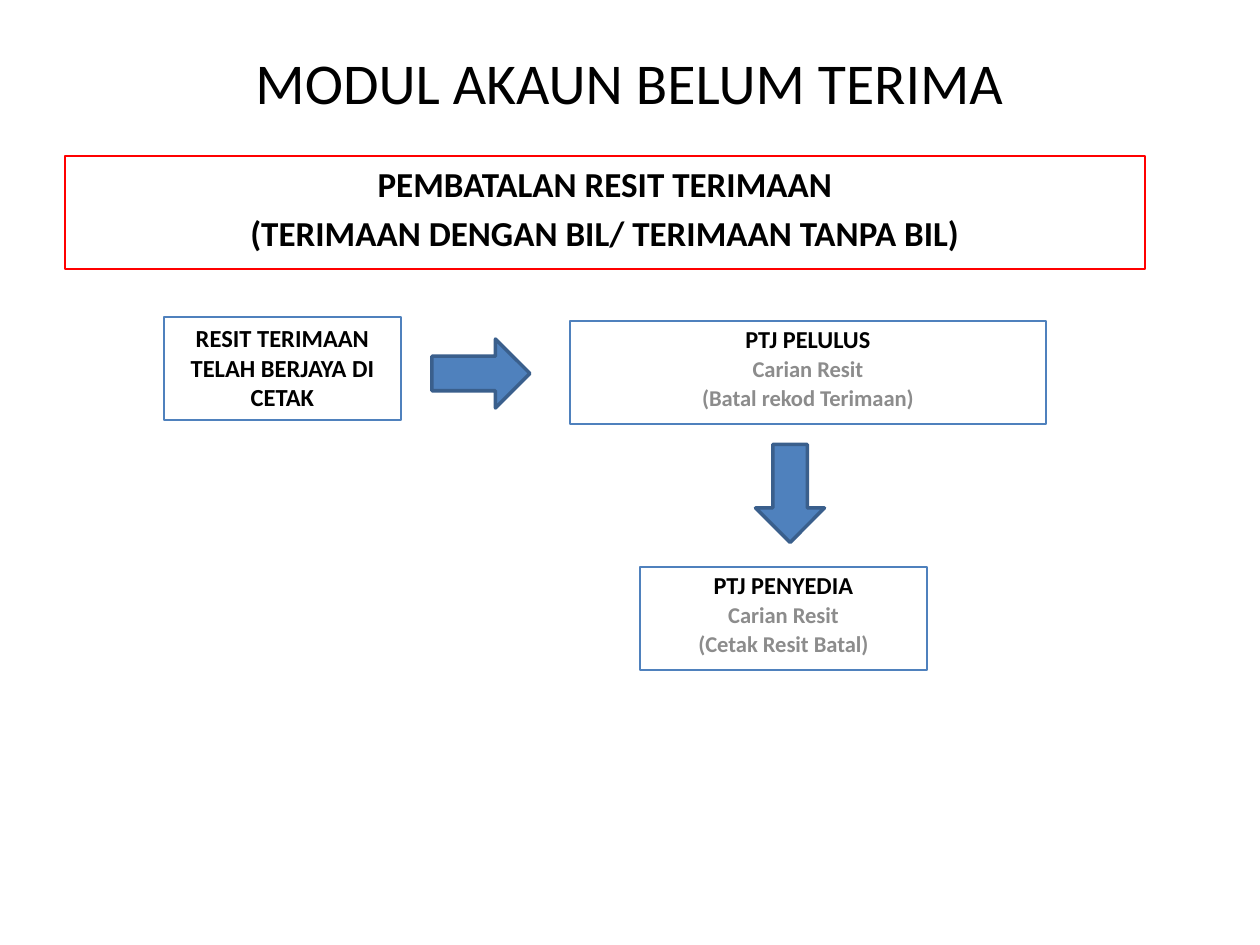
from dataclasses import dataclass

from pptx import Presentation
from pptx.dml.color import RGBColor
from pptx.enum.shapes import MSO_SHAPE
from pptx.enum.text import MSO_ANCHOR, PP_ALIGN
from pptx.slide import Slide
from pptx.text.text import TextFrame
from pptx.util import Emu, Inches, Pt

PIXELS_PER_INCH = 126
ARROW_WIDTH, ARROW_HEIGHT = 98, 69


@dataclass(frozen=True)
class Theme:
    font: str = "Calibri"
    black: RGBColor = RGBColor(0x00, 0x00, 0x00)
    grey: RGBColor = RGBColor(0x8C, 0x8C, 0x8C)
    red: RGBColor = RGBColor(0xFF, 0x00, 0x00)
    blue: RGBColor = RGBColor(0x4F, 0x81, 0xBD)
    dark_blue: RGBColor = RGBColor(0x3A, 0x5F, 0x8C)
    title_size: float = 33
    heading_size: float = 20
    step_size: float = 14
    role_size: float = 13.9
    detail_size: float = 12.9


THEME = Theme()


@dataclass(frozen=True)
class Line:
    text: str
    size: float
    color: RGBColor = THEME.black
    bold: bool = True


@dataclass(frozen=True)
class Box:
    left: int
    top: int
    width: int
    height: int
    lines: tuple[Line, ...]
    border: RGBColor = THEME.blue
    line_spacing: float = 1.0


@dataclass(frozen=True)
class Arrow:
    left: int
    top: int
    rotation: int = 0


def px(length: int) -> Emu:
    return Emu(round(length * Inches(1) / PIXELS_PER_INCH))


def role_lines(role: str, *details: str) -> tuple[Line, ...]:
    """A black role name followed by its grey actions."""
    return (Line(role, THEME.role_size),
            *(Line(text, THEME.detail_size, THEME.grey) for text in details))


TITLE = Line("MODUL AKAUN BELUM TERIMA", THEME.title_size, bold=False)
BOXES = (
    Box(65, 156, 1080, 113, (
        Line("PEMBATALAN RESIT TERIMAAN", THEME.heading_size),
        Line("(TERIMAAN DENGAN BIL/ TERIMAAN TANPA BIL)", THEME.heading_size),
    ), border=THEME.red),
    Box(164, 317, 237, 103, (
        Line("RESIT TERIMAAN TELAH BERJAYA DI CETAK", THEME.step_size),
    )),
    Box(570, 321, 476, 103,
        role_lines("PTJ PELULUS", "Carian Resit", "(Batal rekod Terimaan)"),
        line_spacing=0.9),
    Box(640, 567, 287, 103,
        role_lines("PTJ PENYEDIA", "Carian Resit", "(Cetak Resit Batal)"),
        line_spacing=0.9),
)
ARROWS = (Arrow(432, 339), Arrow(741, 459, rotation=90))


def write_lines(frame: TextFrame, lines: tuple[Line, ...],
                line_spacing: float = 1.0, space_ratio: float = 0.2) -> None:
    """Write centred paragraphs, spaced in proportion to their type size."""
    frame.word_wrap = True
    for index, line in enumerate(lines):
        paragraph = frame.add_paragraph() if index else frame.paragraphs[0]
        paragraph.text = line.text
        paragraph.alignment = PP_ALIGN.CENTER
        paragraph.line_spacing = line_spacing
        paragraph.space_before = Pt(round(line.size * space_ratio, 1))
        font = paragraph.font
        font.name = THEME.font
        font.size = Pt(line.size)
        font.bold = line.bold
        font.color.rgb = line.color


def add_title(slide: Slide) -> None:
    shape = slide.shapes.add_textbox(px(94), px(47), px(1071), px(69))
    shape.text_frame.vertical_anchor = MSO_ANCHOR.MIDDLE
    write_lines(shape.text_frame, (TITLE,), space_ratio=0)


def add_box(slide: Slide, box: Box) -> None:
    shape = slide.shapes.add_shape(MSO_SHAPE.RECTANGLE, px(box.left), px(box.top),
                                   px(box.width), px(box.height))
    shape.shadow.inherit = False
    shape.fill.background()
    shape.line.color.rgb = box.border
    shape.line.width = Pt(0.75)
    shape.text_frame.vertical_anchor = MSO_ANCHOR.TOP
    write_lines(shape.text_frame, box.lines, box.line_spacing)


def add_arrow(slide: Slide, arrow: Arrow) -> None:
    shape = slide.shapes.add_shape(MSO_SHAPE.RIGHT_ARROW, px(arrow.left), px(arrow.top),
                                   px(ARROW_WIDTH), px(ARROW_HEIGHT))
    shape.rotation = arrow.rotation
    shape.shadow.inherit = False
    shape.fill.solid()
    shape.fill.fore_color.rgb = THEME.blue
    shape.line.color.rgb = THEME.dark_blue
    shape.line.width = Pt(2)


def main() -> None:
    presentation = Presentation()
    presentation.slide_width = px(1260)
    presentation.slide_height = px(945)
    slide = presentation.slides.add_slide(presentation.slide_layouts[6])
    add_title(slide)
    for box in BOXES:
        add_box(slide, box)
    for arrow in ARROWS:
        add_arrow(slide, arrow)
    presentation.save("out.pptx")


if __name__ == "__main__":
    main()
